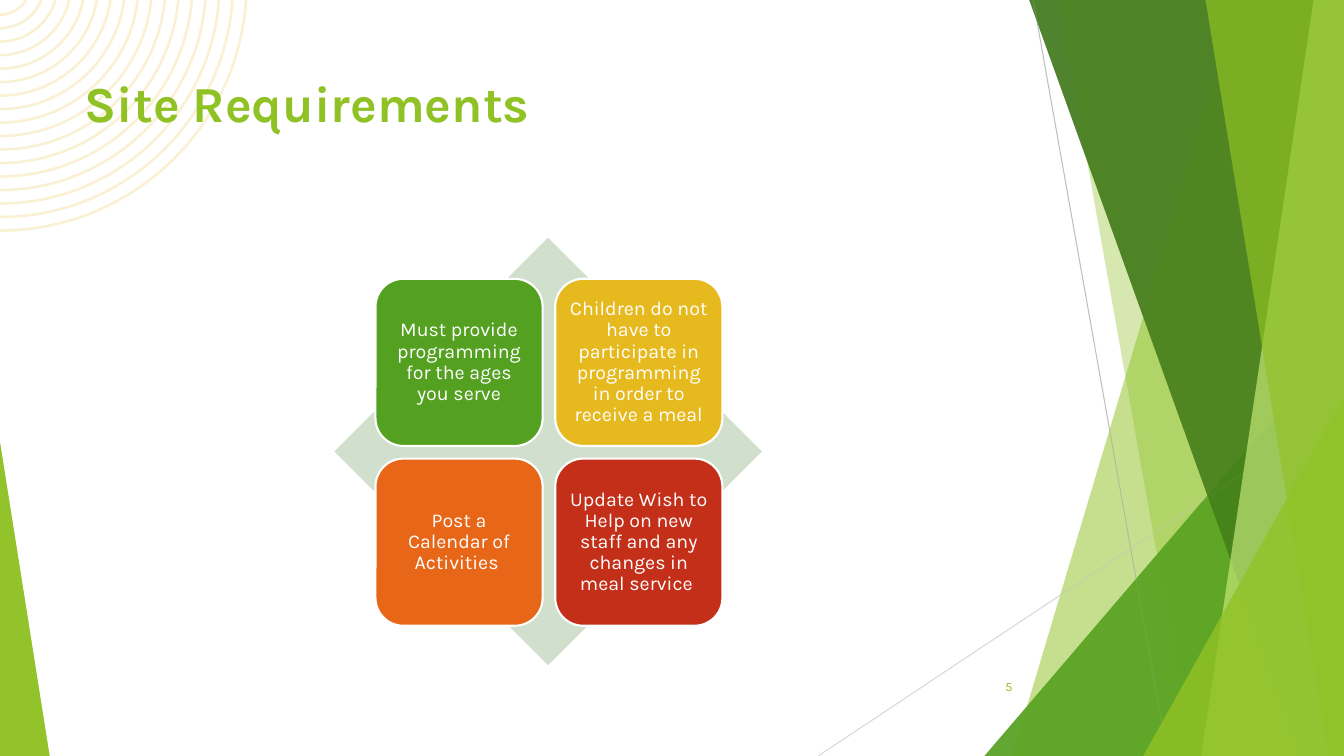
from dataclasses import dataclass
from itertools import product
from math import asin, cos, pi, sin, tan

from lxml.etree import SubElement
from pptx import Presentation
from pptx.dml.color import RGBColor
from pptx.enum.shapes import MSO_CONNECTOR as Connector, MSO_SHAPE as Shape
from pptx.enum.text import MSO_ANCHOR as Anchor, PP_ALIGN as Align
from pptx.oxml.ns import qn
from pptx.util import Inches, Pt

COLUMNS, ROWS = 160, 90


@dataclass(frozen=True)
class Theme:
    font: str = "Karla"
    lime: str = "90C226"
    green: str = "54A021"
    forest: str = "3F7819"
    pale_lime: str = "C0E474"
    gold: str = "E6B91E"
    orange: str = "E76618"
    red: str = "C42F1A"
    cream: str = "FAF1D2"
    sage: str = "D1DFCD"
    white: str = "FFFFFF"
    gray: str = "BFBFBF"
    light_gray: str = "D9D9D9"
    title_size: float = 36
    card_size: float = 14
    number_size: float = 9
    border: float = 1.5
    hairline: float = 0.75


def write_text(frame, text, *, font, size, color, bold=False, align=Align.LEFT,
               anchor=Anchor.TOP, spacing=1.0):
    frame.word_wrap = True
    frame.vertical_anchor = anchor
    paragraph = frame.paragraphs[0]
    paragraph.alignment = align
    paragraph.line_spacing = spacing
    run = paragraph.add_run()
    run.text = text
    run.font.name = font
    run.font.size = Pt(size)
    run.font.bold = bold
    run.font.color.rgb = RGBColor.from_string(color)


def bend(lines):
    curve = SubElement(lines[0].getparent(), qn("a:cubicBezTo"))
    lines[0].addprevious(curve)
    for line in lines:
        curve.append(line[0])
        line.getparent().remove(line)


class SlideBuilder:
    def __init__(self, presentation, theme):
        self.theme = theme
        self.slide = presentation.slides.add_slide(presentation.slide_layouts[6])
        self.column = presentation.slide_width / COLUMNS
        self.row = presentation.slide_height / ROWS

    def place(self, x, y):
        return round(x * self.column), round(y * self.row)

    def paint(self, shape, color, opacity=100, border=None):
        shape.shadow.inherit = False
        shape.fill.solid()
        shape.fill.fore_color.rgb = RGBColor.from_string(color)
        if opacity < 100:
            tint = shape.fill._xPr.find(qn("a:solidFill"))[0]
            SubElement(tint, qn("a:alpha"), val=str(opacity * 1000))
        if border:
            shape.line.color.rgb = RGBColor.from_string(border)
            shape.line.width = Pt(self.theme.border)
        else:
            shape.line.fill.background()

    def outline(self, contours, color, opacity=100):
        contours = [[self.place(*point) for point in contour] for contour in contours]
        builder = self.slide.shapes.build_freeform(*contours[0][0])
        for index, contour in enumerate(contours):
            if index:
                builder.move_to(*contour[0])
            builder.add_line_segments(contour[1:], close=True)
        shape = builder.convert_to_shape()
        self.paint(shape, color, opacity)
        return shape

    def preset(self, kind, x, y, width, height, color, opacity=100, border=None):
        shape = self.slide.shapes.add_shape(
            kind, *self.place(x, y), *self.place(width, height))
        self.paint(shape, color, opacity, border)
        return shape

    def triangle(self, x, y, width, apex, color, opacity):
        shape = self.preset(Shape.ISOSCELES_TRIANGLE, x, y, width, ROWS - y, color, opacity)
        shape.adjustments[0] = apex

    def line(self, start, end, color):
        connector = self.slide.shapes.add_connector(
            Connector.STRAIGHT, *self.place(*start), *self.place(*end))
        connector.line.color.rgb = RGBColor.from_string(color)
        connector.line.width = Pt(self.theme.hairline)
        SubElement(connector._element.spPr, qn("a:effectLst"))

    def text(self, x, y, width, height, text, **style):
        box = self.slide.shapes.add_textbox(*self.place(x, y), *self.place(width, height))
        write_text(box.text_frame, text, font=self.theme.font, **style)

    def card(self, x, y, side, text, color):
        shape = self.preset(Shape.ROUNDED_RECTANGLE, x, y, side, side, color,
                            border=self.theme.white)
        frame = shape.text_frame
        frame.margin_left = frame.margin_right = Inches(0.06)
        frame.margin_top = frame.margin_bottom = Inches(0.06)
        write_text(frame, text, font=self.theme.font, size=self.theme.card_size,
                   color=self.theme.white, align=Align.CENTER, anchor=Anchor.MIDDLE,
                   spacing=0.9)

    def band(self, top, bottom, color, opacity):
        corners = [(top, -0.1), (COLUMNS, -0.1), (COLUMNS, ROWS), (bottom, ROWS)]
        self.outline([corners], color, opacity)

    def facets(self):
        theme = self.theme
        self.band(147.4, 120.5, theme.lime, 30)
        self.band(126, 142, theme.lime, 20)
        self.triangle(117.2, 40, 42.8, 1, theme.green, 72)
        self.band(122.5, 154.9, theme.forest, 70)
        self.band(156.4, 143, theme.pale_lime, 70)
        self.band(143.5, 158.2, theme.lime, 65)
        self.triangle(136.1, 47.2, 23.9, 1, theme.lime, 80)
        self.triangle(0, 52.7, 5.9, 0, theme.lime, 85)

    def rings(self, count=17, outer=29.5, inner=3.8, thickness=0.3, rise=1.9):
        def arc(radius):
            start = asin(rise / radius)
            handle = radius * 4 / 3 * tan((pi / 2 - start) / 4)
            x, y = radius * cos(start), 0
            bottom = radius - rise
            return [(x, y), (x - handle * sin(start), y + handle * cos(start)),
                    (handle, bottom), (0, bottom)]

        gap = (outer - inner) / (count - 1)
        radii = [outer - gap * index for index in range(count)]
        shape = self.outline(
            [arc(radius) + arc(radius - thickness)[::-1] for radius in radii],
            self.theme.cream)
        lines = list(shape._element.iter(qn("a:lnTo")))
        for first in range(0, len(lines), 7):
            bend(lines[first:first + 3])
            bend(lines[first + 4:first + 7])


def main():
    presentation = Presentation()
    presentation.slide_width = Inches(13.33)
    presentation.slide_height = Inches(7.5)
    theme = Theme()
    builder = SlideBuilder(presentation, theme)

    builder.facets()
    builder.rings()
    builder.line((123, 0), (139, ROWS), theme.gray)
    builder.line((COLUMNS, 48.4), (97.4, ROWS), theme.light_gray)
    builder.facets()

    builder.text(8.9, 8, 112.8, 17.3, "Site Requirements",
                 size=theme.title_size, color=theme.lime, bold=True)
    builder.text(112.7, 79.3, 9, 4.8, "5", size=theme.number_size, color=theme.lime,
                 align=Align.RIGHT, anchor=Anchor.MIDDLE)

    builder.preset(Shape.DIAMOND, 39.8, 28.3, 50.9, 50.9, theme.sage)
    requirements = [
        ("Must provide programming for the ages you serve", theme.green),
        ("Children do not have to participate in programming in order to receive a meal",
         theme.gold),
        ("Post a Calendar of Activities ", theme.orange),
        ("Update Wish to Help on new staff and any changes in meal service ", theme.red),
    ]
    left, top, side, pitch = 44.7, 33.2, 19.9, 21.4
    for (row, column), (text, color) in zip(product(range(2), repeat=2), requirements):
        builder.card(left + column * pitch, top + row * pitch, side, text, color)

    presentation.save("out.pptx")


if __name__ == "__main__":
    main()
